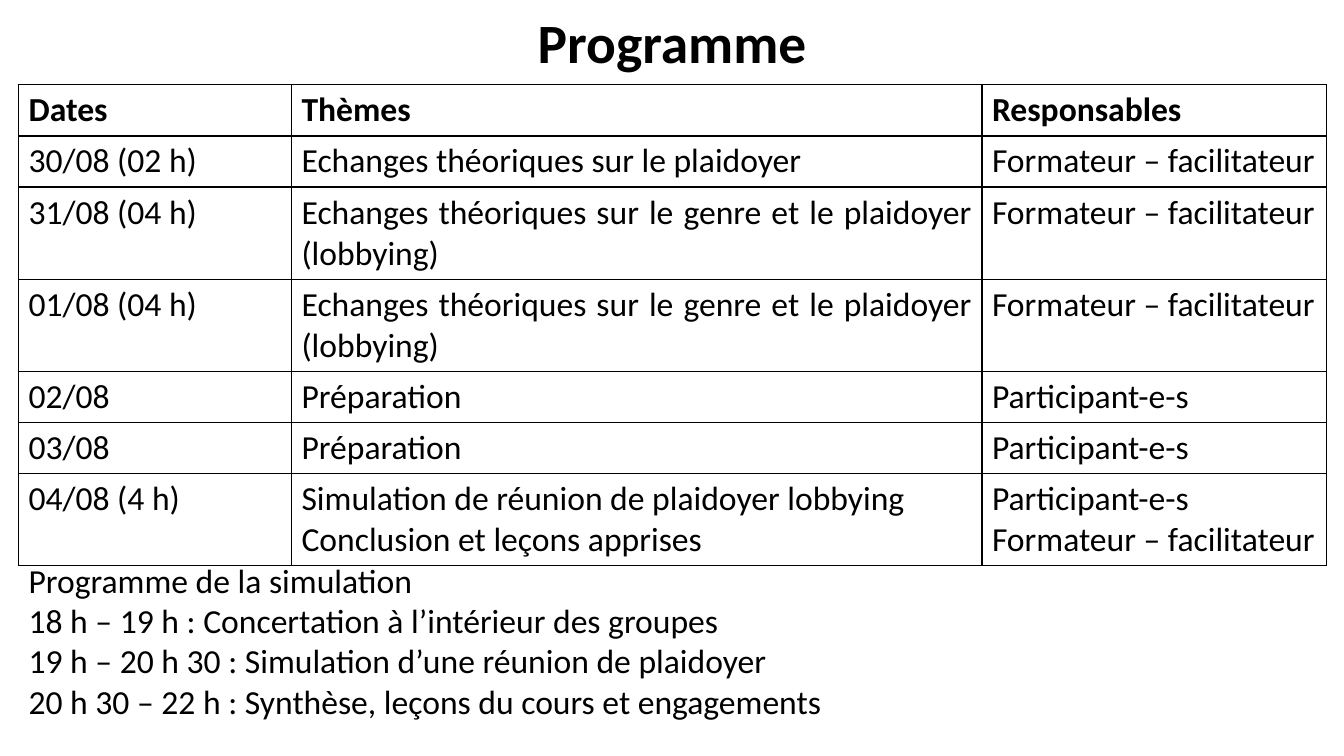
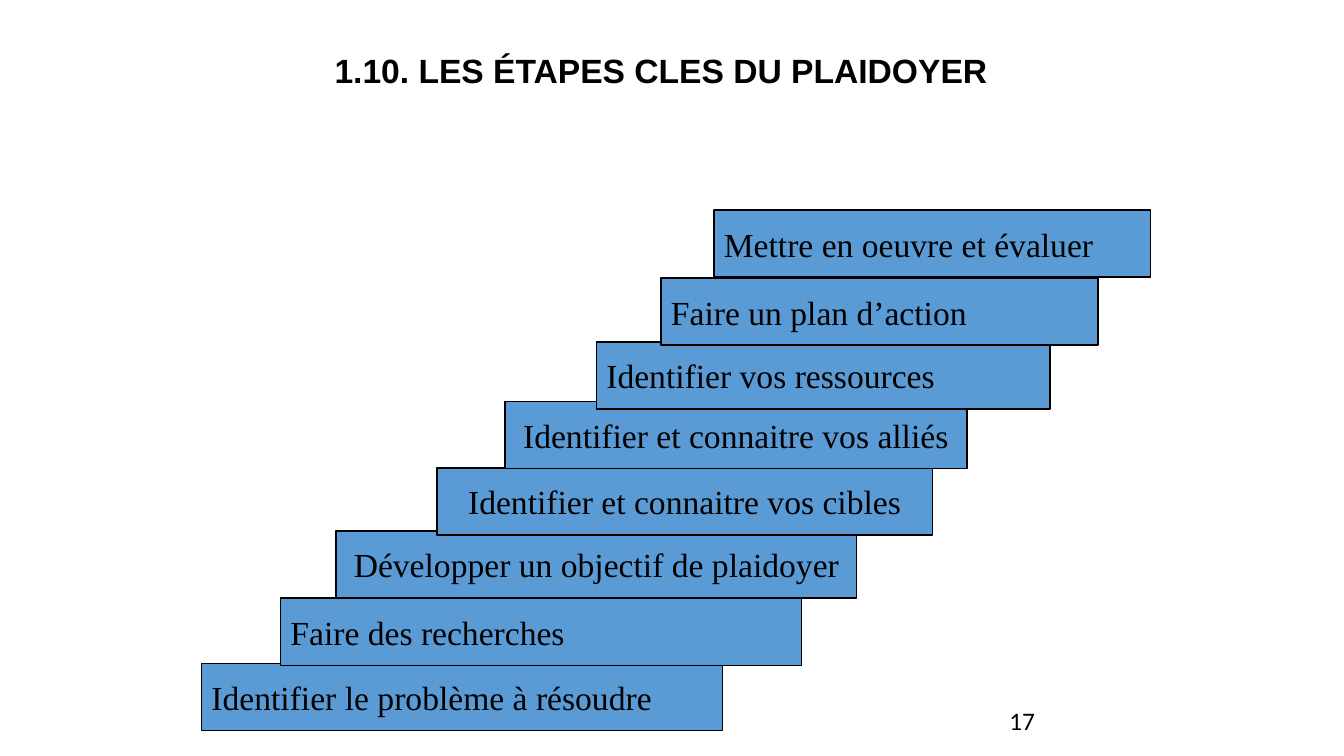
from lxml.etree import SubElement
from pptx import Presentation
from pptx.dml.color import RGBColor
from pptx.enum.shapes import MSO_SHAPE
from pptx.enum.text import MSO_ANCHOR, MSO_AUTO_SIZE, PP_ALIGN
from pptx.oxml.ns import qn
from pptx.util import Inches, Pt

COLORS = {"text": "000000", "line": "000000", "step": "5B9BD5"}
COLS, ROWS = 160, 90
LEFT, CENTER, JUSTIFY = PP_ALIGN.LEFT, PP_ALIGN.CENTER, PP_ALIGN.JUSTIFY

PROGRAMME = [
    ("Dates", "Thèmes", "Responsables"),
    ("30/08 (02 h)", "Echanges théoriques sur le plaidoyer", "Formateur – facilitateur"),
    ("31/08 (04 h)", "Echanges théoriques sur le genre et le plaidoyer (lobbying)",
     "Formateur – facilitateur"),
    ("01/08 (04 h)", "Echanges théoriques sur le genre et le plaidoyer (lobbying)",
     "Formateur – facilitateur"),
    ("02/08", "Préparation", "Participant-e-s"),
    ("03/08", "Préparation", "Participant-e-s"),
    ("04/08 (4 h)", "Simulation de réunion de plaidoyer lobbying\nConclusion et leçons apprises",
     "Participant-e-s\nFormateur – facilitateur"),
]
LINES_PER_ROW = (1, 1, 2, 2, 1, 1, 2)

SIMULATION = "\n".join([
    "Programme de la simulation",
    "18 h – 19 h : Concertation à l’intérieur des groupes",
    "19 h – 20 h 30 : Simulation d’une réunion de plaidoyer",
    "20 h 30 – 22 h : Synthèse, leçons du cours et engagements",
])

STEPS = [
    ("Identifier le problème à résoudre", 24, 79, 62, LEFT),
    ("Faire des recherches", 33.4, 71.2, 62, LEFT),
    ("Développer un objectif de plaidoyer", 40, 63.2, 62, CENTER),
    ("Identifier et connaitre vos cibles", 52, 55.7, 59, CENTER),
    ("Identifier et connaitre vos alliés", 60.1, 47.8, 55, CENTER),
    ("Identifier vos ressources", 71, 40.7, 54, LEFT),
    ("Faire un plan d’action", 78.7, 33.1, 52, LEFT),
    ("Mettre en oeuvre et évaluer", 85, 25, 52, LEFT),
]


class Deck:
    """Hold the deck's style and current slide, and place elements on a grid."""

    def __init__(self):
        self.prs = Presentation()
        self.prs.slide_width, self.prs.slide_height = Inches(13.33), Inches(7.5)
        self.slide = None

    def x(self, cols):
        return round(self.prs.slide_width * cols / COLS)

    def y(self, rows):
        return round(self.prs.slide_height * rows / ROWS)

    def box(self, left, top, width, height):
        return self.x(left), self.y(top), self.x(width), self.y(height)

    def color(self, name):
        return RGBColor.from_string(COLORS[name])

    def add_slide(self, layout):
        self.slide = self.prs.slides.add_slide(self.prs.slide_layouts.get_by_name(layout))

    def text(self, tf, text, font="Calibri", size=24, bold=False, align=LEFT, spacing=1.0):
        tf.text = text
        for p in tf.paragraphs:
            p.alignment, p.line_spacing = align, spacing
            p.space_before = Pt(0)
            for r in p.runs:
                r.font.name, r.font.size, r.font.bold = font, Pt(size), bold
                r.font.color.rgb = self.color("text")

    def place(self, sp, box):
        sp.left, sp.top, sp.width, sp.height = self.box(*box)
        sp.text_frame.auto_size = MSO_AUTO_SIZE.NONE
        return sp.text_frame

    def title(self, text, box, font, size, spacing=1.0):
        tf = self.place(self.slide.shapes.title, box)
        tf.vertical_anchor = MSO_ANCHOR.MIDDLE
        self.text(tf, text, font, size, True, CENTER, spacing)

    def body(self, text, box):
        tf = self.place(self.slide.placeholders[1], box)
        self.text(tf, text)
        for p in tf.paragraphs:
            pPr = p._p.get_or_add_pPr()
            pPr.set("marL", "0")
            pPr.set("indent", "0")
            SubElement(pPr, qn("a:buNone"))

    def border(self, cell):
        tcPr = cell._tc.get_or_add_tcPr()
        for side in ("lnL", "lnR", "lnT", "lnB"):
            ln = SubElement(tcPr, qn(f"a:{side}"), w=str(Pt(1)))
            fill = SubElement(ln, qn("a:solidFill"))
            SubElement(fill, qn("a:srgbClr"), val=COLORS["line"])

    def table(self, rows, lines, left, top, widths):
        heights = [1.2 + 4.88 * n for n in lines]
        box = self.box(left, top, sum(widths), sum(heights))
        table = self.slide.shapes.add_table(len(rows), len(widths), *box).table
        table.first_row = table.horz_banding = False
        for col, width in zip(table.columns, widths):
            col.width = self.x(width)
        for i, (row, height) in enumerate(zip(rows, heights)):
            table.rows[i].height = self.y(height)
            for j, text in enumerate(row):
                cell = table.cell(i, j)
                self.border(cell)
                cell.fill.background()
                self.text(cell.text_frame, text, bold=i == 0, align=JUSTIFY)

    def step(self, text, left, top, width, align):
        sp = self.slide.shapes.add_shape(MSO_SHAPE.RECTANGLE, *self.box(left, top, width, 8))
        sp.shadow.inherit = False
        sp.fill.solid()
        sp.fill.fore_color.rgb = self.color("step")
        sp.line.color.rgb, sp.line.width = self.color("line"), Pt(1)
        tf = sp.text_frame
        tf.word_wrap, tf.vertical_anchor = False, MSO_ANCHOR.MIDDLE
        self.text(tf, text, "Times New Roman", align=align)

    def number(self, text, box):
        tf = self.slide.shapes.add_textbox(*self.box(*box)).text_frame
        tf.word_wrap, tf.vertical_anchor = True, MSO_ANCHOR.MIDDLE
        self.text(tf, text, size=18)


def main():
    deck = Deck()
    deck.add_slide("Title and Content")
    deck.title("Programme", (11, 1.7, 138, 7.4), "Calibri", 39.6, 0.9)
    deck.table(PROGRAMME, LINES_PER_ROW, 2.2, 10.1, (32.5, 82.2, 41))
    deck.body(SIMULATION, (2.2, 66, 99.6, 20.6))

    deck.add_slide("Title Only")
    deck.number("17", (119, 83.4, 30, 4.8))
    for step in STEPS:
        deck.step(*step)
    deck.title("1.10. LES ÉTAPES CLES DU PLAIDOYER", (22.3, 5.3, 112.8, 6), "Arial", 24)
    deck.prs.save("out.pptx")


if __name__ == "__main__":
    main()
